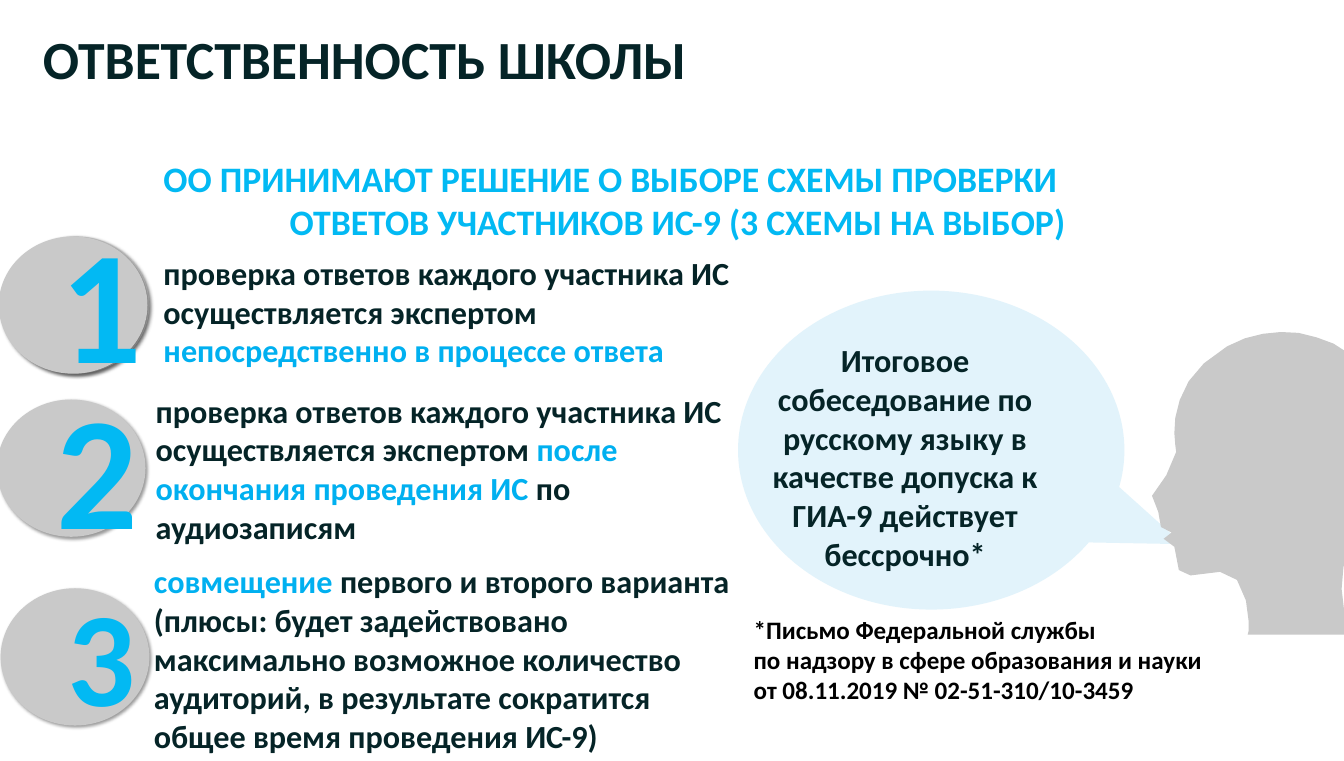
from math import dist

from lxml.etree import SubElement
from pptx import Presentation
from pptx.dml.color import RGBColor
from pptx.enum.shapes import MSO_SHAPE
from pptx.enum.text import MSO_ANCHOR, MSO_AUTO_SIZE, PP_ALIGN
from pptx.oxml.ns import qn
from pptx.util import Pt

DARK = RGBColor(0x05, 0x24, 0x27)
BLACK = RGBColor(0, 0, 0)
CYAN = RGBColor(0x02, 0xB9, 0xF3)
SKY = RGBColor(0x00, 0xB0, 0xF0)
GREY = RGBColor(0xC9, 0xC9, 0xC9)
PALE = RGBColor(0xE2, 0xF3, 0xFB)
FONT = "Calibri"

# Content: each text is a list of paragraphs, each paragraph a list of (words, colour)
TITLE = [[("ОТВЕТСТВЕННОСТЬ ШКОЛЫ", DARK)]]
HEADING = [
    [("ОО ПРИНИМАЮТ РЕШЕНИЕ О ВЫБОРЕ СХЕМЫ ПРОВЕРКИ ", CYAN)],
    [("ОТВЕТОВ УЧАСТНИКОВ ИС-9 (3 СХЕМЫ НА ВЫБОР)", CYAN)],
]
CHECK = "проверка ответов каждого участника ИС осуществляется экспертом "
SCHEMES = [
    [[(CHECK, DARK), ("непосредственно в процессе ответа", SKY)]],
    [[(CHECK, DARK), ("после окончания проведения ИС", SKY), (" по аудиозаписям", DARK)]],
    [
        [("совмещение", SKY), (" первого и второго варианта", DARK)],
        [("(плюсы: будет задействовано максимально возможное количество аудиторий, "
          "в результате сократится общее время проведения ИС-9)", DARK)],
    ],
]
SPEECH = [[("Итоговое собеседование по русскому языку в качестве допуска к "
            "ГИА-9 действует бессрочно*", DARK)]]
FOOTNOTE = [
    [("*Письмо Федеральной службы", BLACK)],
    [("по надзору в сфере образования и науки", BLACK)],
    [("от 08.11.2019 № 02-51-310/10-3459", BLACK)],
]

# Scheme geometry: badges (left, top, width), digit box, digit size, text box.
# The first badge is a pair set slightly apart, which thickens its edge and shadow.
BADGE_HEIGHT = 153.4
SCHEME_PLACES = [
    ([(3.6, 264.2, 163.4), (-1.4, 264.2, 166.3)],
     (59.8, 222.5, 106.5, 225.4), 180, (175.7, 279.4, 660.2, 138.2)),
    ([(-3.6, 446.4, 166.3)],
     (54.7, 408.2, 106.5, 225.4), 180, (167, 433.4, 658.1, 181.4)),
    ([(0.7, 657.3, 166.3)],
     (67, 636, 91.4, 189.4), 150, (164.9, 624.2, 662.4, 225.4)),
]

# Head profile: start point, then Bezier curves (two controls and an end)
HEAD_START = (1396, 705)
HEAD_CURVES = [
    ((1396, 705), (1398, 637), (1364, 639)),
    ((1330, 640), (1326, 649), (1318, 637)),
    ((1310, 624), (1318, 617), (1313, 611)),
    ((1313, 611), (1301, 608), (1301, 602)),
    ((1301, 597), (1310, 595), (1310, 595)),
    ((1310, 595), (1298, 595), (1298, 589)),
    ((1297, 583), (1304, 577), (1295, 572)),
    ((1285, 567), (1282, 564), (1288, 554)),
    ((1294, 545), (1317, 518), (1315, 505)),
    ((1313, 494), (1301, 427), (1372, 387)),
    ((1442, 348), (1533, 381), (1554, 466)),
    ((1576, 551), (1508, 610), (1508, 610)),
    ((1508, 610), (1485, 672), (1516, 709)),
]
HEAD_END = (1395, 709)
STEP_LENGTH = 24


def add_text(slide, place, paragraphs, size, align=PP_ALIGN.LEFT, wrap=True):
    shape = slide.shapes.add_textbox(*map(Pt, place))
    shape.text_frame.auto_size = MSO_AUTO_SIZE.SHAPE_TO_FIT_TEXT
    write(shape.text_frame, paragraphs, size, align, wrap)


def write(frame, paragraphs, size, align, wrap=True):
    frame.word_wrap = wrap
    for index, parts in enumerate(paragraphs):
        paragraph = frame.paragraphs[0] if index == 0 else frame.add_paragraph()
        paragraph.alignment = align
        for words, colour in parts:
            run = paragraph.add_run()
            run.text = words
            run.font.name = FONT
            run.font.size = Pt(size)
            run.font.bold = True
            run.font.color.rgb = colour


def paint(shape, colour):
    shape.shadow.inherit = False
    shape.fill.solid()
    shape.fill.fore_color.rgb = colour
    shape.line.fill.background()


def add_soft_shadow(shape):
    effects = shape._element.spPr.find(qn("a:effectLst"))
    shadow = SubElement(effects, qn("a:outerShdw"), blurRad=str(Pt(4)), dist=str(Pt(3)),
                        dir="2700000", algn="tl", rotWithShape="0")
    colour = SubElement(shadow, qn("a:srgbClr"), val="000000")
    SubElement(colour, qn("a:alpha"), val="40000")


def curve_points(start, curves):
    points = []
    for first, second, end in curves:
        corners = (start, first, second, end)
        steps = max(1, round(sum(map(dist, corners, corners[1:])) / STEP_LENGTH))
        for step in range(1, steps + 1):
            t = step / steps
            weights = ((1 - t) ** 3, 3 * t * (1 - t) ** 2, 3 * t * t * (1 - t), t ** 3)
            points.append(tuple(
                sum(weight * corner[axis] for weight, corner in zip(weights, corners))
                for axis in (0, 1)))
        start = end
    return points


def main():
    presentation = Presentation()
    presentation.slide_width = Pt(1502.64)
    presentation.slide_height = Pt(850.32)
    slide = presentation.slides.add_slide(presentation.slide_layouts[6])

    # Title and heading
    add_text(slide, (41, 25.2, 794.2, 79.9), TITLE, 60)
    add_text(slide, (116.6, 171.4, 1081.6, 104.4), HEADING, 40, PP_ALIGN.RIGHT)

    # Three numbered schemes
    for number, (paragraphs, place) in enumerate(zip(SCHEMES, SCHEME_PLACES), 1):
        badges, digit_place, digit_size, text_place = place
        for left, top, width in badges:
            badge = slide.shapes.add_shape(
                MSO_SHAPE.OVAL, Pt(left), Pt(top), Pt(width), Pt(BADGE_HEIGHT))
            paint(badge, GREY)
            add_soft_shadow(badge)
        add_text(slide, digit_place, [[(str(number), CYAN)]], digit_size, PP_ALIGN.RIGHT, False)
        add_text(slide, text_place, paragraphs, 36)

    # Speech bubble
    bubble = slide.shapes.add_shape(
        MSO_SHAPE.OVAL_CALLOUT, Pt(825.2), Pt(324.7), Pt(432), Pt(356.4))
    bubble.adjustments[0] = 0.651
    bubble.adjustments[1] = 0.295
    paint(bubble, PALE)

    # Speaking head
    builder = slide.shapes.build_freeform(*HEAD_START, scale=Pt(1))
    builder.add_line_segments(curve_points(HEAD_START, HEAD_CURVES) + [HEAD_END])
    paint(builder.convert_to_shape(), GREY)

    # Speech and footnote
    speech = slide.shapes.add_shape(
        MSO_SHAPE.ROUNDED_RECTANGLE, Pt(846.7), Pt(433.4), Pt(330.5), Pt(153.4))
    speech.shadow.inherit = False
    speech.fill.background()
    speech.line.fill.background()
    speech.text_frame.vertical_anchor = MSO_ANCHOR.MIDDLE
    write(speech.text_frame, SPEECH, 36, PP_ALIGN.CENTER)
    add_text(slide, (835.5, 683.3, 553.7, 108.7), FOOTNOTE, 28)

    presentation.save("out.pptx")


if __name__ == "__main__":
    main()
